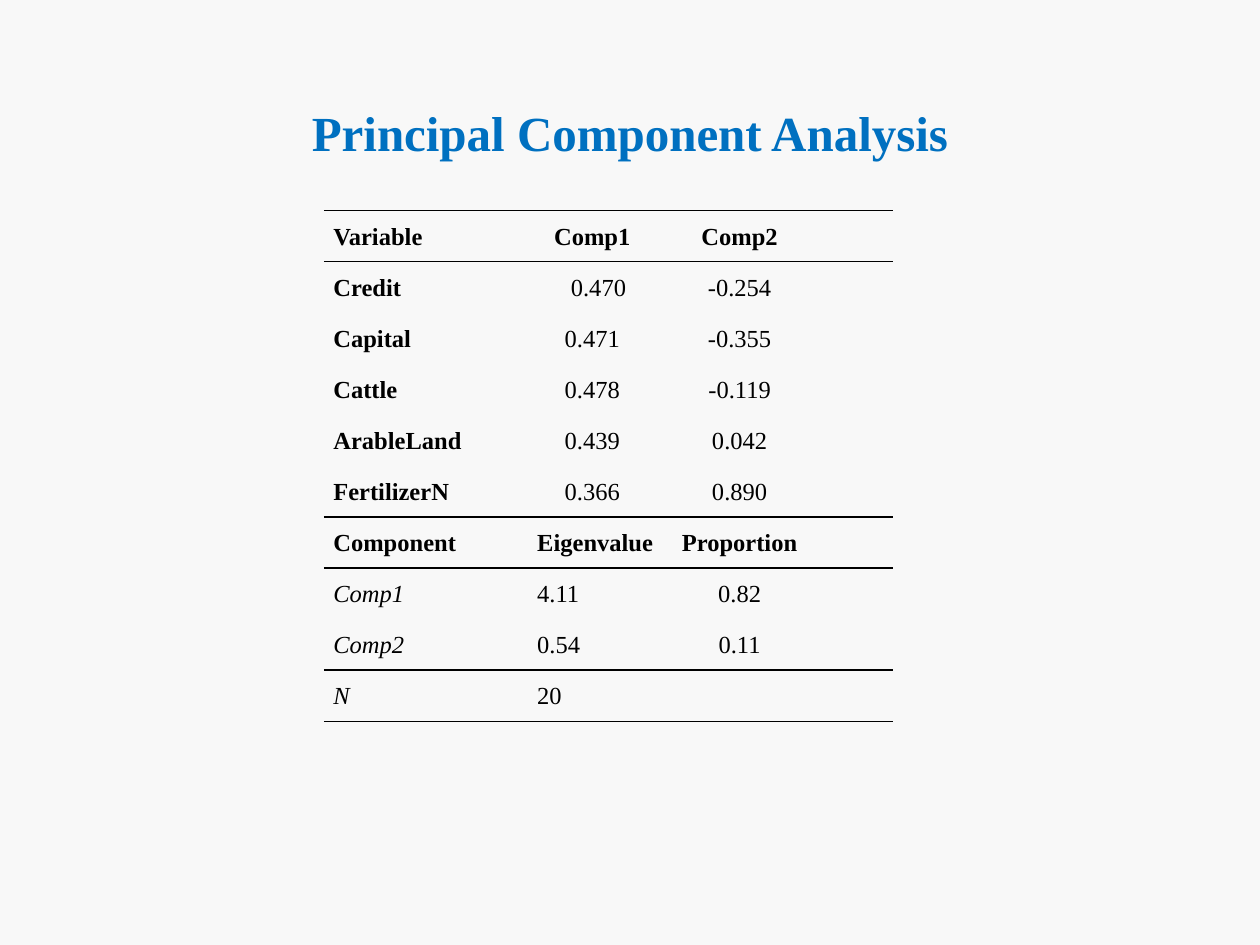
from pptx import Presentation
from pptx.dml.color import RGBColor
from pptx.enum.text import MSO_ANCHOR, PP_ALIGN
from pptx.oxml.ns import qn
from pptx.util import Cm, Pt
from lxml import etree

LEFT, CENTER = PP_ALIGN.LEFT, PP_ALIGN.CENTER
MIDDLE = MSO_ANCHOR.MIDDLE

THEME = {
    "font": "Times New Roman",
    "back": RGBColor(0xF8, 0xF8, 0xF8),
    "title": RGBColor(0x00, 0x70, 0xC0),
    "text": RGBColor(0, 0, 0),
    "title_size": Pt(28),
    "cell_size": Pt(14),
    "rule": Pt(1),
}

ROWS = [
    ("Variable", "Comp1", "Comp2"),
    ("Credit", "0.470", "-0.254"),
    ("Capital", "0.471", "-0.355"),
    ("Cattle", "0.478", "-0.119"),
    ("ArableLand", "0.439", "0.042"),
    ("FertilizerN", "0.366", "0.890"),
    ("Component", "Eigenvalue", "Proportion"),
    ("Comp1", "4.11", "0.82"),
    ("Comp2", "0.54", "0.11"),
    ("N", "20", ""),
]
WIDTHS = [3.81, 3.2, 2.74, 1.24, 0.46]
HEADS = {0, 6}                # rows in bold throughout
LOWER = 6                     # first row of the eigenvalue part
RULES = {0, 1, 6, 7, 9, 10}   # row edges that carry a line


def style(font, **form):
    form = {"name": THEME["font"], "size": THEME["cell_size"]} | form
    color = form.pop("color", THEME["text"])
    for key, val in form.items():
        setattr(font, key, val)
    font.color.rgb = color


def border(cell, side, shown):
    props = cell._tc.get_or_add_tcPr()
    line = etree.SubElement(props, qn(f"a:ln{side}"), w=str(THEME["rule"]))
    if shown:
        fill = etree.SubElement(line, qn("a:solidFill"))
        etree.SubElement(fill, qn("a:srgbClr"), val=str(THEME["text"]))
    else:
        etree.SubElement(line, qn("a:noFill"))


# Slide
deck = Presentation()
deck.slide_width, deck.slide_height = Cm(25.4), Cm(19.05)
slide = deck.slides.add_slide(deck.slide_layouts[5])
slide.background.fill.solid()
slide.background.fill.fore_color.rgb = THEME["back"]

# Title
title = slide.shapes.title
place = {"left": Cm(1.27), "top": Cm(1.07), "width": Cm(22.86), "height": Cm(3.18)}
for key, val in place.items():
    setattr(title, key, val)
frame = title.text_frame
frame.text = "Principal Component Analysis"
frame.vertical_anchor = MIDDLE
para = frame.paragraphs[0]
para.alignment = CENTER
style(para.runs[0].font, size=THEME["title_size"], color=THEME["title"], bold=True)

# Table
high = Cm(1.03)
table = slide.shapes.add_table(
    len(ROWS), len(WIDTHS), Cm(6.53), Cm(4.24), Cm(sum(WIDTHS)), high * len(ROWS)
).table
table.first_row = table.horz_banding = False
for col, wide in zip(table.columns, WIDTHS):
    col.width = Cm(wide)

# Cells
inset = {"margin_left": Cm(0.19), "margin_right": Cm(0.19),
         "margin_top": 0, "margin_bottom": 0, "vertical_anchor": MIDDLE}
for r, row in enumerate(table.rows):
    row.height = high
    for c, cell in enumerate(row.cells):
        for key, val in inset.items():
            setattr(cell, key, val)
        for side, shown in (("L", False), ("R", False),
                            ("T", r in RULES), ("B", r + 1 in RULES)):
            border(cell, side, shown)
        cell.fill.background()

        para = cell.text_frame.paragraphs[0]
        para.line_spacing = 1.07
        eigen = c == 1 and r >= LOWER
        para.alignment = LEFT if c == 0 or eigen else CENTER
        if eigen:
            para._p.get_or_add_pPr().set("marL", str(Cm(0.3)))
        elif (r, c) == (1, 1):
            para._p.get_or_add_pPr().set("marL", str(Cm(0.25)))

        label = ROWS[r][c] if c < len(ROWS[r]) else ""
        if label:
            run = para.add_run()
            run.text = label
            style(run.font, bold=r in HEADS or (c == 0 and r < LOWER),
                  italic=c == 0 and r > LOWER)
        else:
            style(para.font)

deck.save("out.pptx")
